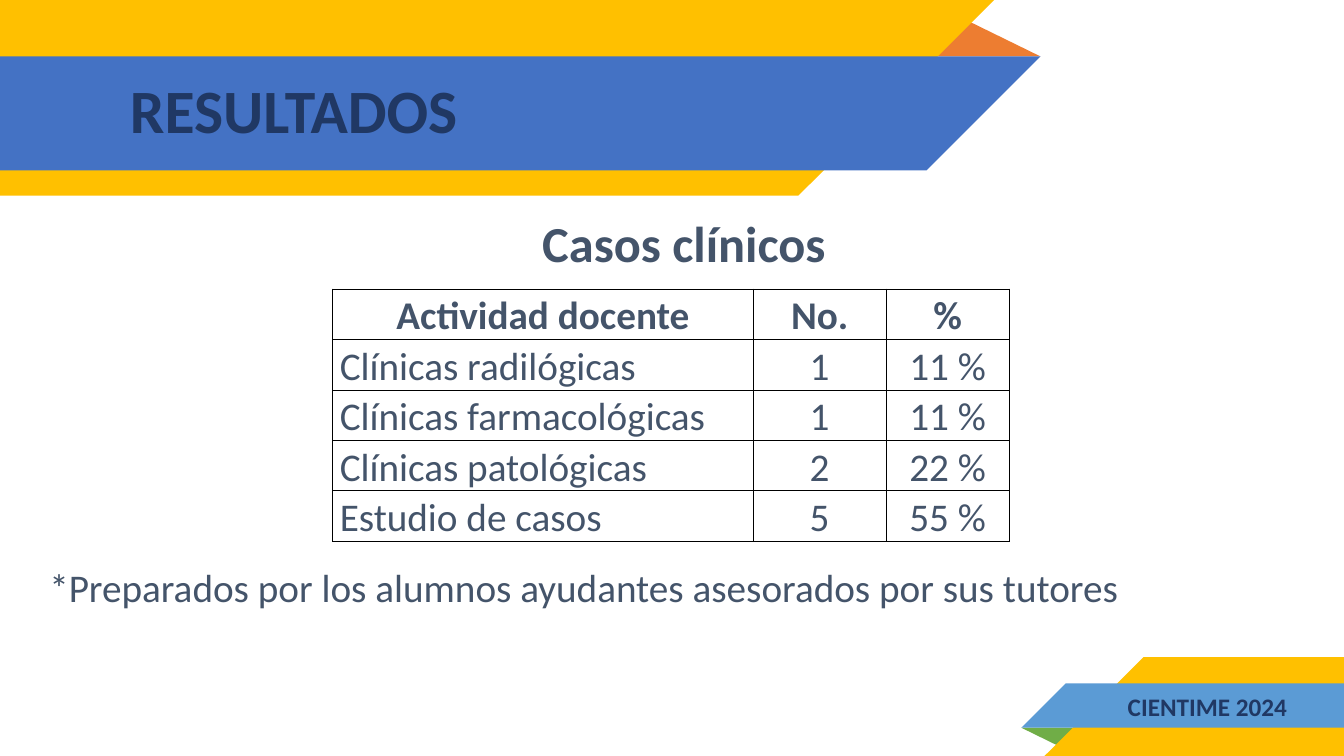
from lxml.etree import SubElement
from pptx import Presentation
from pptx.dml.color import RGBColor
from pptx.enum.shapes import MSO_SHAPE
from pptx.enum.text import MSO_ANCHOR, PP_ALIGN
from pptx.oxml.ns import qn
from pptx.util import Inches, Pt

YELLOW = RGBColor(0xFF, 0xC0, 0x00)
ORANGE = RGBColor(0xED, 0x7D, 0x31)
BLUE = RGBColor(0x44, 0x72, 0xC4)
LIGHT_BLUE = RGBColor(0x5B, 0x9B, 0xD5)
GREEN = RGBColor(0x70, 0xAD, 0x47)
NAVY = RGBColor(0x20, 0x38, 0x64)
SLATE = RGBColor(0x44, 0x54, 0x6A)
FONT = "Calibri"
WIDTH, HEIGHT = 13.33, 7.5

COL_WIDTHS = (4.17, 1.32, 1.22)
ROWS = (
    ("Actividad docente", "No.", "%"),
    ("Clínicas radilógicas", "1", "11 %"),
    ("Clínicas farmacológicas", "1", "11 %"),
    ("Clínicas patológicas", "2", "22 %"),
    ("Estudio de casos", "5", "55 %"),
)


def paint(sp, color):
    sp.fill.solid()
    sp.fill.fore_color.rgb = color
    sp.line.fill.background()
    sp.shadow.inherit = False


def add_band(s, x, y, w, h, color, cut_right):
    """Band with one end cut at 45 degrees."""
    if cut_right:
        points = [(x, y), (x + w, y), (x + w - h, y + h), (x, y + h)]
    else:
        points = [(x + h, y), (x + w, y), (x + w, y + h), (x, y + h)]
    points = [(Inches(px), Inches(py)) for px, py in points]
    builder = s.shapes.build_freeform(*points[0])
    builder.add_line_segments(points[1:], close=True)
    paint(builder.convert_to_shape(), color)


def add_fold(s, x, y, w, h, color, rotation=0):
    sp = s.shapes.add_shape(MSO_SHAPE.ISOSCELES_TRIANGLE,
                            Inches(x), Inches(y), Inches(w), Inches(h))
    sp.adjustments[0] = 0.32
    sp.rotation = rotation
    paint(sp, color)


def add_run(p, text, size, color, bold):
    r = p.add_run()
    r.text = text
    r.font.name, r.font.size, r.font.bold = FONT, Pt(size), bold
    r.font.color.rgb = color


def add_text(s, x, y, w, h, text, size, color, bold=True, align=PP_ALIGN.CENTER):
    tf = s.shapes.add_textbox(Inches(x), Inches(y), Inches(w), Inches(h)).text_frame
    tf.word_wrap = True
    p = tf.paragraphs[0]
    p.alignment = align
    add_run(p, text, size, color, bold)
    return tf


def add_header(s, x, y, w, h):
    # Bands and fold; w is the reach of the blue tip
    add_fold(s, x + w - 1.14, y + 0.18, 1.14, 0.38, ORANGE)
    add_band(s, x, y, w - 0.46, h, YELLOW, True)
    add_band(s, x, y + 0.56, w, 1.13, BLUE, True)
    # Title
    tf = add_text(s, x + 1.19, y + 0.57, 7.67, 1.12, "RESULTADOS", 44, NAVY,
                  align=PP_ALIGN.LEFT)
    tf.margin_top = tf.margin_bottom = Inches(0.1)
    tf.vertical_anchor = MSO_ANCHOR.MIDDLE
    tf.paragraphs[0].line_spacing = 0.9


def add_footer(s, x, y, w, h):
    # Bands and fold; x is the blue tip
    add_fold(s, x, y + 0.7, 0.57, 0.19, GREEN, 180)
    add_band(s, x + 0.23, y, w - 0.23, h, YELLOW, False)
    add_band(s, x, y + 0.26, w, 0.44, LIGHT_BLUE, False)
    # Event name
    add_text(s, x + 0.76, y + 0.29, 2.17, 0.4, "CIENTIME 2024", 18, NAVY)


def set_borders(cell):
    tcPr = cell._tc.get_or_add_tcPr()
    for i, side in enumerate(("lnL", "lnR", "lnT", "lnB")):
        ln = SubElement(tcPr, qn(f"a:{side}"), w=str(Pt(1)))
        fill = SubElement(ln, qn("a:solidFill"))
        SubElement(fill, qn("a:srgbClr"), val="000000")
        tcPr.insert(i, ln)


def add_cases_table(s, x, y, w, h):
    table = s.shapes.add_table(len(ROWS), len(COL_WIDTHS), Inches(x), Inches(y),
                               Inches(w), Inches(h)).table
    table.first_row = table.horz_banding = False
    for column, width in zip(table.columns, COL_WIDTHS):
        column.width = Inches(width)
    for i, row in enumerate(ROWS):
        for j, text in enumerate(row):
            cell = table.cell(i, j)
            cell.fill.background()
            set_borders(cell)
            cell.margin_left = cell.margin_right = Inches(0.07)
            cell.margin_top = cell.margin_bottom = 0
            p = cell.text_frame.paragraphs[0]
            p.alignment = PP_ALIGN.LEFT if i and not j else PP_ALIGN.CENTER
            p.line_spacing = 1.07
            p.space_after = Pt(8)
            add_run(p, text, 28, SLATE, i == 0)


def add_body(s, x, y, w, h):
    # Heading, table and note
    add_text(s, x + 1.96, y, 8.87, 0.71, "Casos clínicos", 36, SLATE)
    add_cases_table(s, x + 2.91, y + 0.81, sum(COL_WIDTHS), 2.5)
    add_text(s, x, y + h - 0.57, w, 0.57,
             "*Preparados por los alumnos ayudantes asesorados por sus tutores",
             28, SLATE, bold=False, align=PP_ALIGN.LEFT)


def main():
    prs = Presentation()
    prs.slide_width, prs.slide_height = Inches(WIDTH), Inches(HEIGHT)
    s = prs.slides.add_slide(prs.slide_layouts[6])
    add_header(s, 0, 0, 10.32, 1.94)
    add_footer(s, 10.13, 6.52, WIDTH - 10.13, HEIGHT - 6.52)
    add_body(s, 0.39, 2.06, 11.02, 4.05)
    prs.save("out.pptx")


if __name__ == "__main__":
    main()
